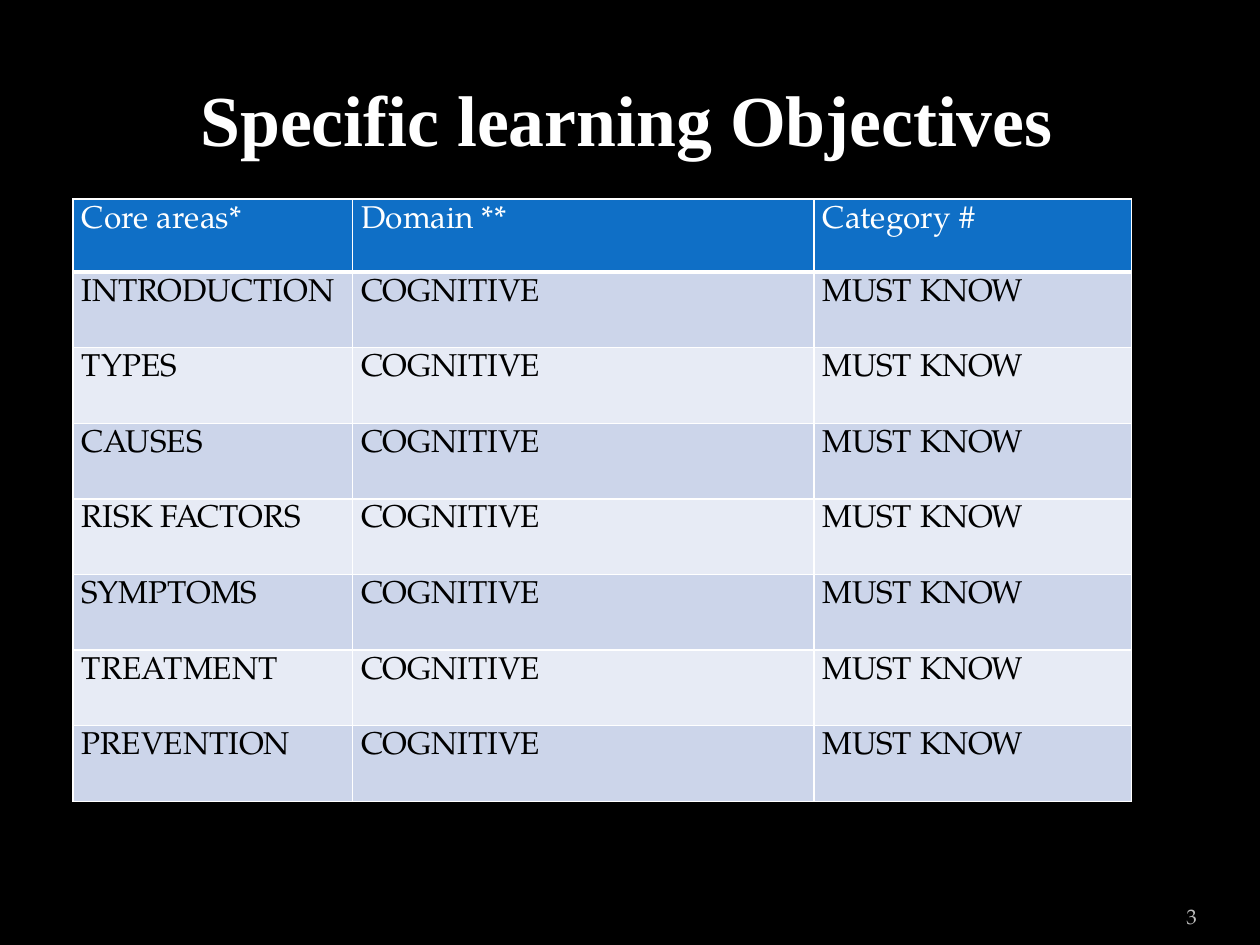
from lxml import etree
from pptx import Presentation
from pptx.dml.color import RGBColor
from pptx.enum.text import MSO_ANCHOR, PP_ALIGN
from pptx.oxml.ns import qn
from pptx.util import Inches, Pt

CENTER, RIGHT = PP_ALIGN.CENTER, PP_ALIGN.RIGHT
MIDDLE, BOTTOM = MSO_ANCHOR.MIDDLE, MSO_ANCHOR.BOTTOM

BLACK = RGBColor(0x00, 0x00, 0x00)
WHITE = RGBColor(0xFF, 0xFF, 0xFF)
GRAY = RGBColor(0xBD, 0xBD, 0xBD)
BLUE = RGBColor(0x0F, 0x6F, 0xC6)
BANDS = (RGBColor(0xE7, 0xEB, 0xF5), RGBColor(0xCC, 0xD5, 0xEA))

SERIF = "Times New Roman"
BODY = "TeX Gyre Pagella"

HEADS = ("Core areas*", "Domain **", "Category #")
AREAS = ("INTRODUCTION", "TYPES", "CAUSES", "RISK FACTORS",
         "SYMPTOMS", "TREATMENT", "PREVENTION")
WIDTHS = (2.22, 3.66, 2.52)
HEAD_HIGH, ROW_HIGH = 0.58, 0.6


def add_run(para, text, font, size, color, bold=False):
    run = para.add_run()
    run.text = text
    run.font.name = font
    run.font.size = Pt(size)
    run.font.color.rgb = color
    run.font.bold = bold


def add_label(slide, box, text, font, size, color, align, anchor,
              bold=False, inset=0.1):
    frame = slide.shapes.add_textbox(*map(Inches, box)).text_frame
    frame.word_wrap = True
    frame.vertical_anchor = anchor
    frame.margin_left = frame.margin_right = Inches(inset)
    para = frame.paragraphs[0]
    para.alignment = align
    add_run(para, text, font, size, color, bold)


def add_edges(cell, below):
    """Draw white cell borders; below is the width of the bottom one."""
    props = cell._tc.get_or_add_tcPr()
    sides = (("a:lnL", 1), ("a:lnR", 1), ("a:lnT", 1), ("a:lnB", below))
    for spot, (tag, width) in enumerate(sides):
        line = etree.Element(qn(tag), w=str(Pt(width)))
        fill = etree.SubElement(line, qn("a:solidFill"))
        etree.SubElement(fill, qn("a:srgbClr"), val=str(WHITE))
        props.insert(spot, line)


def fill_cell(cell, text, color, back, below=1):
    cell.fill.solid()
    cell.fill.fore_color.rgb = back
    cell.margin_left = cell.margin_right = Inches(0.07)
    cell.margin_top = cell.margin_bottom = Inches(0.05)
    para = cell.text_frame.paragraphs[0]
    para.line_spacing = Pt(18)
    add_run(para, text, BODY, 18, color)
    add_edges(cell, below)


def add_goals(slide):
    rows = [HEADS] + [(area, "COGNITIVE", "MUST KNOW") for area in AREAS]
    high = HEAD_HIGH + ROW_HIGH * len(AREAS)
    table = slide.shapes.add_table(
        len(rows), len(HEADS), Inches(0.58), Inches(1.58),
        Inches(sum(WIDTHS)), Inches(high)).table
    for col, width in zip(table.columns, WIDTHS):
        col.width = Inches(width)
    for r, texts in enumerate(rows):
        table.rows[r].height = Inches(ROW_HIGH if r else HEAD_HIGH)
        for c, text in enumerate(texts):
            cell = table.cell(r, c)
            if r:
                fill_cell(cell, text, BLACK, BANDS[r % 2])
            else:
                fill_cell(cell, text, WHITE, BLUE, below=3)


def main():
    deck = Presentation()
    deck.slide_width, deck.slide_height = Inches(10), Inches(7.5)
    slide = deck.slides.add_slide(deck.slide_layouts[6])
    slide.background.fill.solid()
    slide.background.fill.fore_color.rgb = BLACK
    add_label(slide, (1.25, 0.33, 7.6, 1.21), "Specific learning Objectives ",
              SERIF, 41, WHITE, CENTER, MIDDLE, bold=True)
    add_goals(slide)
    add_label(slide, (8.67, 7.02, 0.83, 0.4), "3",
              BODY, 12, GRAY, RIGHT, BOTTOM, inset=0)
    deck.save("out.pptx")


if __name__ == "__main__":
    main()
